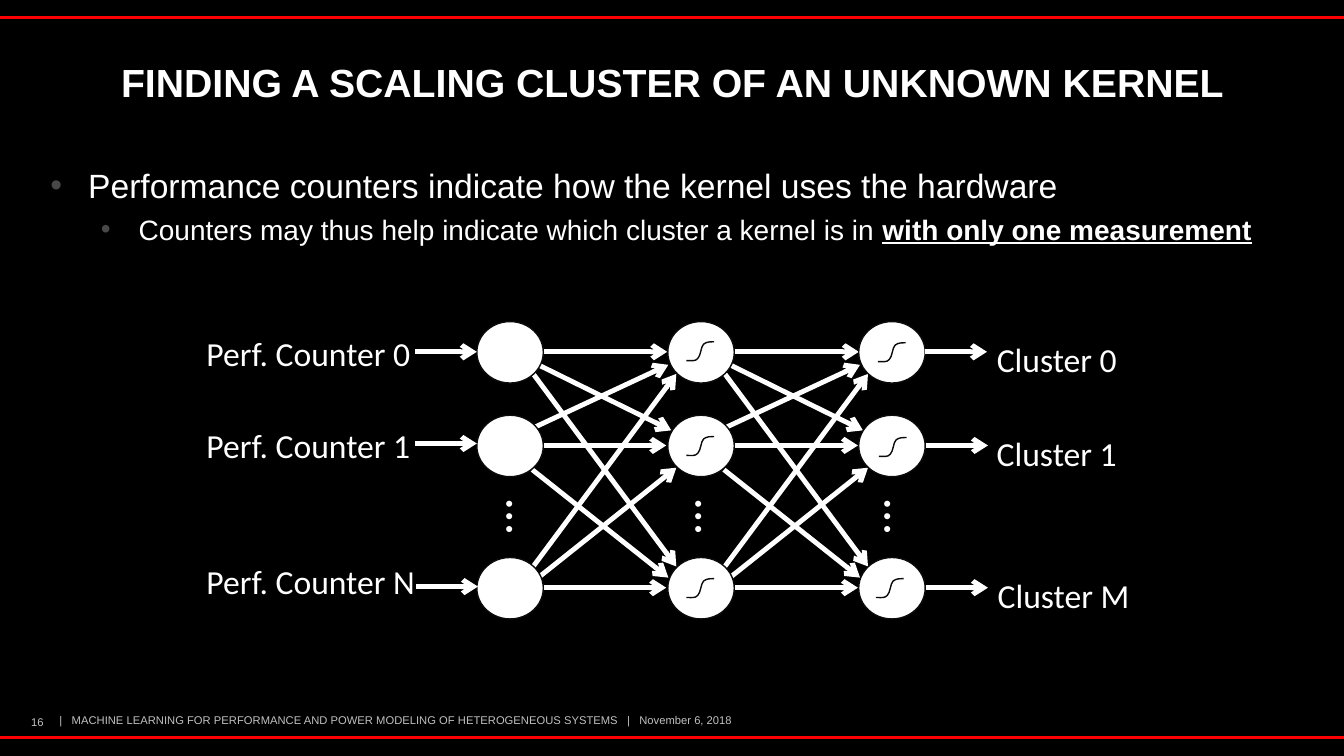
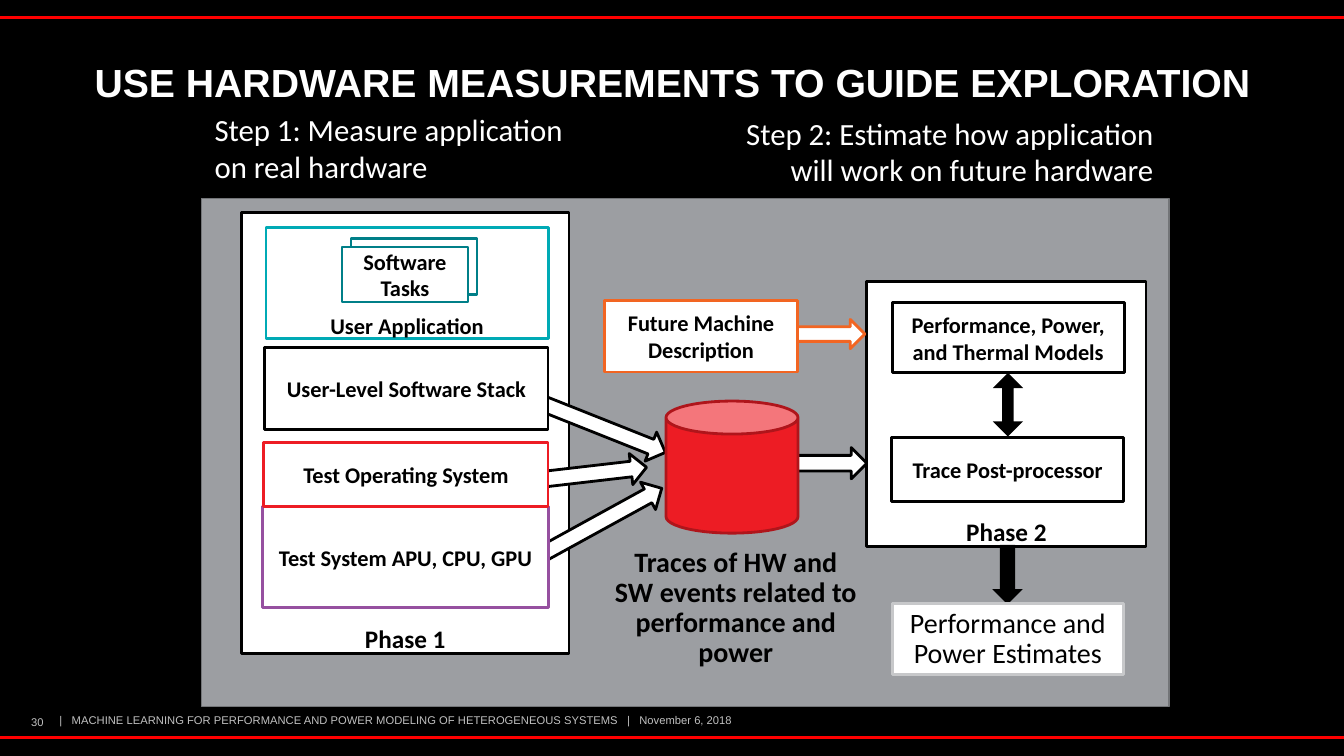
"""Build two dark slides on modelling kernels from hardware measurements."""
from dataclasses import dataclass

from pptx import Presentation
from pptx.dml.color import RGBColor
from pptx.enum.shapes import MSO_CONNECTOR, MSO_SHAPE
from pptx.enum.text import MSO_ANCHOR, MSO_AUTO_SIZE, PP_ALIGN
from pptx.oxml.ns import qn
from pptx.oxml.xmlchemy import OxmlElement
from pptx.util import Pt

RECT, OVAL, CAN = MSO_SHAPE.RECTANGLE, MSO_SHAPE.OVAL, MSO_SHAPE.CAN
ARROW, UP_DOWN = MSO_SHAPE.RIGHT_ARROW, MSO_SHAPE.UP_DOWN_ARROW
STRAIGHT = MSO_CONNECTOR.STRAIGHT
TOP, MIDDLE, BOTTOM = MSO_ANCHOR.TOP, MSO_ANCHOR.MIDDLE, MSO_ANCHOR.BOTTOM
LEFT, CENTER, RIGHT = PP_ALIGN.LEFT, PP_ALIGN.CENTER, PP_ALIGN.RIGHT


@dataclass(frozen=True)
class Theme:
    head_font: str = "Arial"
    diagram_font: str = "Calibri"
    black: str = "000000"
    white: str = "FFFFFF"
    rule: str = "FF0000"
    footer: str = "C1C1C1"
    bullet: str = "484848"
    outline: str = "0B0B0B"
    panel: str = "9C9EA2"
    panel_line: str = "737578"
    teal: str = "00AAB5"
    dark_teal: str = "007F88"
    red: str = "ED1C24"
    dark_red: str = "AF151B"
    purple: str = "9650A0"
    orange: str = "F26522"
    silver: str = "C7C8CA"
    title_pt: float = 28
    bullet_pt: tuple = (24, 20)
    footer_pt: float = 8
    label_pt: float = 24
    dots_pt: float = 36
    step_pt: float = 22
    note_pt: float = 20
    phase_pt: float = 18
    box_pt: float = 16


T = Theme()
WIDTH, HEIGHT = 960, 540
FOOTER = ("|   MACHINE LEARNING FOR PERFORMANCE AND POWER MODELING OF "
          "HETEROGENEOUS SYSTEMS   |   November 6, 2018")


@dataclass(frozen=True)
class Label:
    text: str
    x: float
    y: float
    w: float
    h: float
    size: float
    color: str = T.white
    font: str = T.diagram_font
    bold: bool = False
    align: PP_ALIGN = LEFT
    anchor: MSO_ANCHOR = TOP
    rotation: float = 0
    tight: bool = False
    wrap: bool = True


@dataclass(frozen=True)
class Block:
    x: float
    y: float
    w: float
    h: float
    line: str | None = T.black
    text: str = ""
    kind: MSO_SHAPE = RECT
    fill: str = T.white
    weight: float = 2
    rotation: float = 0
    size: float = T.box_pt
    bold: bool = True
    anchor: MSO_ANCHOR = MIDDLE
    tight: bool = False
    adjust: tuple = ()


@dataclass(frozen=True)
class Port:
    text: str
    x: float
    y: float
    w: float
    arrow_x: float
    arrow_y: float


@dataclass(frozen=True)
class Link:
    x1: float
    y1: float
    x2: float
    y2: float


NODE_W, NODE_H = 47.5, 43.9
NODE_LEFTS = [340.6 + 136.4 * i for i in range(3)]
NODE_TOPS = [229.7, 296.6, 398.2]
LINK_PITCH = 136.9
LINKS = [
    Link(388, 251.3, 476.6, 251.3), Link(381.6, 305.3, 477.4, 260.6),
    Link(384.5, 260.6, 479.5, 307.4), Link(380.9, 404.6, 483.1, 267.1),
    Link(387.4, 318.2, 475.9, 318.2), Link(387.4, 419.8, 475.9, 419.8),
    Link(380.9, 267.1, 483.1, 404.6), Link(380.2, 335.5, 477.4, 412.6),
    Link(384.5, 412.6, 483.1, 334.1),
]
PORTS = [
    Port("Perf. Counter 0", 140.4, 234, 166.3, 296.6, 251.3),
    Port("Perf. Counter 1", 140.4, 300, 166.3, 296.6, 316.8),
    Port("Perf. Counter N", 140.4, 397.2, 175, 297.4, 419),
    Port("Cluster 0", 704.9, 238.8, 114.5, 661, 251.3),
    Port("Cluster 1", 704.9, 306, 132.5, 661.7, 318.2),
    Port("Cluster M", 705.6, 406.8, 131.8, 661.7, 419.8),
]
CURVE_ORIGINS = [(490.3, 244.1), (490.3, 311.8), (490.3, 413.3),
                 (627.1, 244.8), (627.8, 312.5), (625.7, 413.3)]
CURVE_W, CURVE_H = 19.8, 13.5
SIGMOID = [(0, 1), (0.18, 1), (0.32, 1.05), (0.41, 0.89), (0.52, 0.74),
           (0.52, 0.26), (0.62, 0.13), (0.73, 0), (0.87, 0), (1, 0)]

PANEL = Block(144, 141.8, 691.2, 362.9, T.panel_line, fill=T.panel, weight=1)
FLOW = [
    Block(619.2, 200.9, 199.4, 189.4, text="Phase 2", size=T.phase_pt, anchor=BOTTOM),
    Block(172.5, 151.9, 234, 315, text="Phase 1", size=T.phase_pt, anchor=BOTTOM),
    Block(190, 162.7, 201.6, 79.2, T.teal, "User Application", anchor=BOTTOM),
    Block(380.2, 293.8, 98.6, 22.3, kind=ARROW, rotation=21.7),
    Block(189.2, 248, 202.3, 59, text="User-Level Software Stack"),
    Block(637.4, 216, 165.6, 50.4, text="Performance, Power, and Thermal Models"),
    Block(637, 312.5, 165.6, 46, text="Trace Post-processor"),
    Block(250.7, 170.6, 90, 39.6, T.dark_teal),
    Block(244.3, 176.4, 90, 39.4, T.dark_teal, "Software Tasks"),
    Block(380.2, 361.4, 98.6, 22.3, kind=ARROW, rotation=331.2),
    Block(187.8, 362.1, 203.8, 72, T.purple, "Test System APU, CPU, GPU"),
    Block(363.6, 328.3, 98.6, 22.3, kind=ARROW, rotation=353.4),
    Block(188.5, 316.1, 203, 46, T.red, "Test Operating System"),
    Block(547.9, 319.7, 71.3, 22.3, kind=ARROW),
    Block(475.7, 286.5, 94.3, 94.3, T.dark_red, kind=CAN, fill=T.red),
    Block(565.2, 228.2, 52.6, 20.9, T.orange, kind=ARROW),
    Block(432, 214.6, 137.5, 51.1, T.orange, "Future Machine Description"),
    Block(698.4, 399.6, 42.5, 21.6, None, kind=ARROW, fill=T.black, rotation=90),
    Block(637.4, 431.1, 165, 51, T.silver, "Performance and Power Estimates",
          size=T.note_pt, bold=False, tight=True),
    Block(709.2, 266.4, 21.6, 45.4, None, kind=UP_DOWN, fill=T.black,
          adjust=(0.41, 0.38)),
]
CAPTIONS = [
    Label("Traces of HW and SW events related to performance and power",
          432, 387.4, 187.2, 94.3, T.note_pt, T.black, bold=True, align=CENTER,
          anchor=MIDDLE, tight=True),
    Label("Step 1: Measure application on real hardware",
          146.2, 75.6, 266.4, 60.5, T.step_pt),
    Label("Step 2: Estimate how application will work on future hardware",
          509.2, 78.1, 321.8, 60.5, T.step_pt, align=RIGHT),
]


def rgb(color: str) -> RGBColor:
    return RGBColor.from_string(color)


def style_run(r, font: str, size: float, color: str, bold: bool = False) -> None:
    r.font.name, r.font.size, r.font.bold = font, Pt(size), bold
    r.font.color.rgb = rgb(color)


def place(sp, x: float, y: float, w: float, h: float) -> None:
    sp.left, sp.top, sp.width, sp.height = Pt(x), Pt(y), Pt(w), Pt(h)


def write(tf, text: str, font: str, size: float, color: str, bold: bool,
          align: PP_ALIGN, anchor: MSO_ANCHOR, tight: bool = False) -> None:
    tf.text, tf.vertical_anchor = text, anchor
    p = tf.paragraphs[0]
    p.alignment = align
    if tight:
        p.line_spacing = 0.9
    style_run(p.runs[0], font, size, color, bold)


def add_label(s, label: Label):
    sp = s.shapes.add_textbox(Pt(label.x), Pt(label.y), Pt(label.w), Pt(label.h))
    sp.rotation = label.rotation
    sp.text_frame.word_wrap = label.wrap
    write(sp.text_frame, label.text, label.font, label.size, label.color,
          label.bold, label.align, label.anchor, label.tight)
    return sp


def add_block(s, b: Block) -> None:
    sp = s.shapes.add_shape(b.kind, Pt(b.x), Pt(b.y), Pt(b.w), Pt(b.h))
    sp.shadow.inherit = False
    sp.rotation = b.rotation
    for i, value in enumerate(b.adjust):
        sp.adjustments[i] = value
    sp.fill.solid()
    sp.fill.fore_color.rgb = rgb(b.fill)
    if b.line:
        sp.line.color.rgb, sp.line.width = rgb(b.line), Pt(b.weight)
    else:
        sp.line.fill.background()
    if b.text:
        write(sp.text_frame, b.text, T.diagram_font, b.size, T.black, b.bold,
              CENTER, b.anchor, b.tight)
        if b.anchor == BOTTOM:
            sp.text_frame.margin_bottom = 0


def add_line(s, x1: float, y1: float, x2: float, y2: float,
             color: str = T.white, weight: float = 3.5, arrow: bool = True):
    cx = s.shapes.add_connector(STRAIGHT, Pt(x1), Pt(y1), Pt(x2), Pt(y2))
    cx.line.color.rgb, cx.line.width = rgb(color), Pt(weight)
    sp_pr = cx._element.spPr
    if arrow:
        tail = OxmlElement("a:tailEnd")
        tail.set("type", "arrow")
        sp_pr.find(qn("a:ln")).append(tail)
    sp_pr.append(OxmlElement("a:effectLst"))
    return cx


def add_sigmoid(s, x: float, y: float) -> None:
    points = [(Pt(x + u * CURVE_W), Pt(y + v * CURVE_H)) for u, v in SIGMOID]
    builder = s.shapes.build_freeform(*points[0])
    builder.add_line_segments(points[1:], close=False)
    sp = builder.convert_to_shape()
    segments = list(sp._element.iter(qn("a:lnTo")))
    for i in range(0, len(segments), 3):
        curve = OxmlElement("a:cubicBezTo")
        segments[i].addprevious(curve)
        for segment in segments[i:i + 3]:
            curve.append(segment[0])
            segment.getparent().remove(segment)
    sp.shadow.inherit = False
    sp.fill.solid()
    sp.fill.fore_color.rgb = rgb(T.white)
    sp.line.color.rgb, sp.line.width = rgb(T.outline), Pt(1)


def small_label(s, text: str, x: float, y: float, w: float, h: float,
                align: PP_ALIGN = LEFT, wrap: bool = True):
    return add_label(s, Label(text, x, y, w, h, T.footer_pt, T.footer, T.head_font,
                              align=align, anchor=MIDDLE, wrap=wrap))


def share_frame(prs, s) -> None:
    """Draw the background, rules and footer, and move them to the master."""
    fill = prs.slide_master.background.fill
    fill.solid()
    fill.fore_color.rgb = rgb(T.black)
    footer = small_label(s, FOOTER, 42.5, 506.2, 485.3, 16.5, wrap=False)
    footer.text_frame.margin_left = footer.text_frame.margin_right = 0
    rules = [add_line(s, 0, y, WIDTH, y, T.rule, 2, False) for y in (12.7, 527)]
    for i, sp in enumerate([footer, *rules], start=101):
        next(sp._element.iter(qn("p:cNvPr"))).set("id", str(i))
        prs.slide_master.shapes._spTree.append(sp._element)


def add_heading(s, title: str, number: str) -> None:
    place(s.shapes.title, 31, 35.3, 898.5, 50.4)
    write(s.shapes.title.text_frame, title, T.head_font, T.title_pt, T.white,
          True, CENTER, MIDDLE, True)
    small_label(s, number, 13, 507.6, 27.4, 15.8, CENTER)


def format_bullet(p, level: int, margin: float) -> None:
    p.level, p.line_spacing, p.space_before = level, 1.2, Pt(0)
    p_pr = p._p.get_or_add_pPr()
    p_pr.set("marL", str(Pt(margin)))
    p_pr.set("indent", str(Pt(-27)))
    tint, value, char = (OxmlElement(f"a:{n}") for n in ("buClr", "srgbClr", "buChar"))
    value.set("val", T.bullet)
    tint.append(value)
    char.set("char", "•")
    p_pr.extend([tint, char])
    for r in p.runs:
        style_run(r, T.head_font, T.bullet_pt[level], T.white)


def build_network(s) -> None:
    add_heading(s, "FINDING A SCALING CLUSTER OF AN UNKNOWN KERNEL", "16")
    body = s.placeholders[1]
    place(body, 28.8, 108.5, 902.2, 388.8)
    tf = body.text_frame
    tf.auto_size = MSO_AUTO_SIZE.NONE
    tf.text = "Performance counters indicate how the kernel uses the hardware"
    format_bullet(tf.paragraphs[0], 0, 27)
    p = tf.add_paragraph()
    p.text = "Counters may thus help indicate which cluster a kernel is in "
    r = p.add_run()
    r.text = "with only one measurement"
    format_bullet(p, 1, 63)
    r.font.bold = r.font.underline = True

    for shift in (0, LINK_PITCH):
        for k in LINKS:
            add_line(s, k.x1 + shift, k.y1, k.x2 + shift, k.y2)
    for i, x in enumerate(NODE_LEFTS):
        for y in NODE_TOPS:
            add_block(s, Block(x, y, NODE_W, NODE_H, T.outline, kind=OVAL, weight=1))
        add_label(s, Label("…", 355.7 + 135 * i, 344.2, 40.3, 51.1, T.dots_pt,
                           rotation=90))
    for x, y in CURVE_ORIGINS:
        add_sigmoid(s, x, y)
    for port in PORTS:
        add_label(s, Label(port.text, port.x, port.y, port.w, 36, T.label_pt))
        add_line(s, port.arrow_x, port.arrow_y, port.arrow_x + 44, port.arrow_y)


def build_flow(s) -> None:
    add_block(s, PANEL)
    add_heading(s, "USE HARDWARE MEASUREMENTS TO GUIDE EXPLORATION", "30")
    for block in FLOW:
        add_block(s, block)
    for caption in CAPTIONS:
        add_label(s, caption)


def main() -> None:
    prs = Presentation()
    prs.slide_width, prs.slide_height = Pt(WIDTH), Pt(HEIGHT)
    network, flow = (prs.slides.add_slide(prs.slide_layouts[i]) for i in (1, 5))
    share_frame(prs, network)
    build_network(network)
    build_flow(flow)
    prs.save("out.pptx")


if __name__ == "__main__":
    main()
